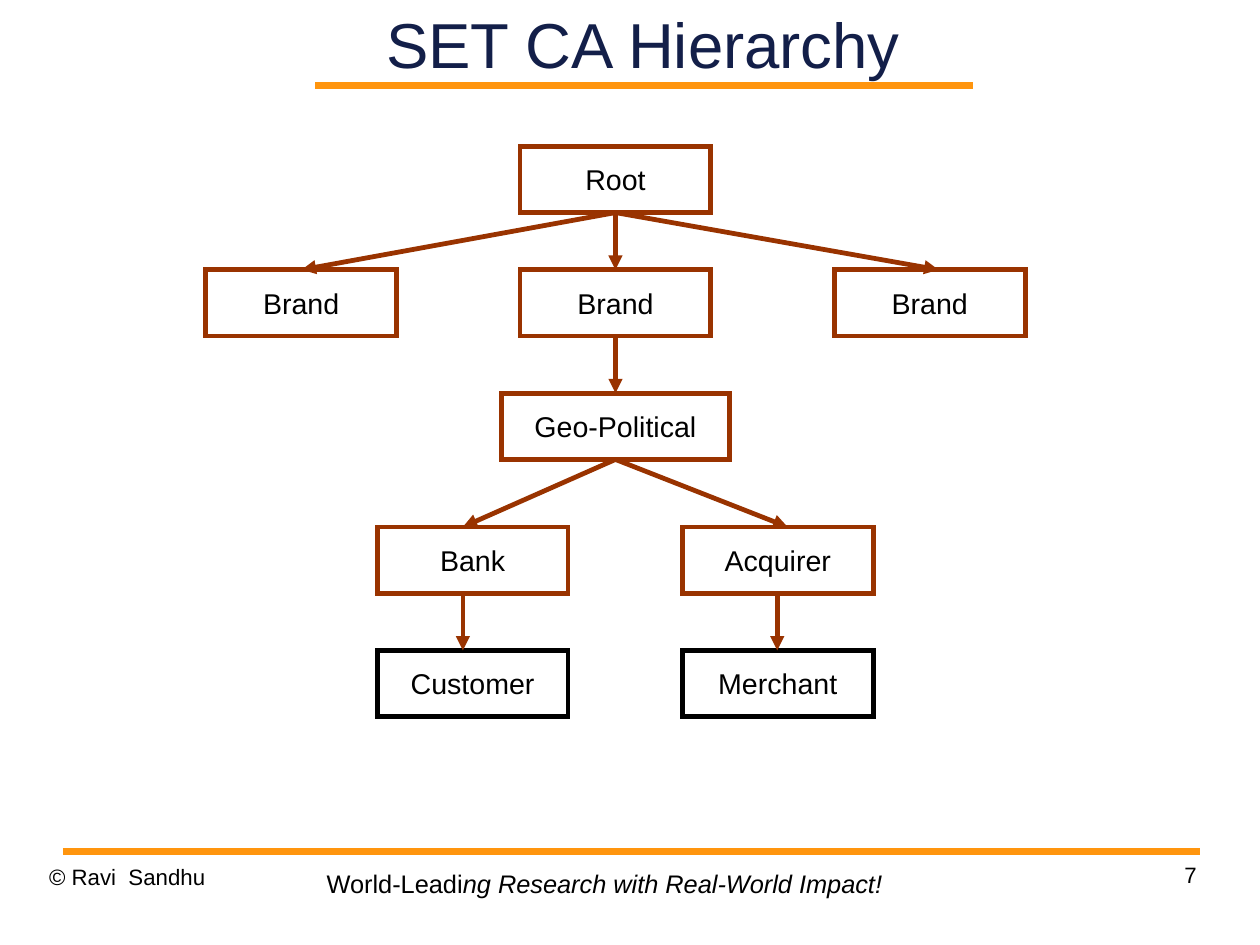
from dataclasses import dataclass

from lxml import etree
from pptx import Presentation
from pptx.dml.color import RGBColor
from pptx.enum.shapes import MSO_CONNECTOR, MSO_SHAPE
from pptx.enum.text import MSO_ANCHOR, PP_ALIGN
from pptx.oxml.ns import qn
from pptx.util import Inches, Pt

STRAIGHT = MSO_CONNECTOR.STRAIGHT
RECT = MSO_SHAPE.RECTANGLE
TOP, MIDDLE = MSO_ANCHOR.TOP, MSO_ANCHOR.MIDDLE
LEFT, CENTER, RIGHT = PP_ALIGN.LEFT, PP_ALIGN.CENTER, PP_ALIGN.RIGHT

BLACK = RGBColor(0x00, 0x00, 0x00)
NAVY = RGBColor(0x13, 0x1F, 0x49)
BROWN = RGBColor(0x99, 0x33, 0x00)
ORANGE = RGBColor(0xFF, 0x95, 0x0E)

# The page is 28 by 21 centimetres
CM_PER_INCH = 2.54
SLIDE_W, SLIDE_H = 28 / CM_PER_INCH, 21 / CM_PER_INCH

BOX_W, BOX_H = 1.67, 0.58
ROOT_Y, BRAND_Y, GEO_Y, ISSUER_Y, HOLDER_Y = 1.28, 2.36, 3.44, 4.61, 5.69
MID_X, BANK_X, ACQUIRER_X = 4.55, 3.3, 5.97
AXIS = MID_X + BOX_W / 2


@dataclass
class Box:
    text: str
    x: float
    y: float
    w: float = BOX_W
    color: RGBColor = BROWN


@dataclass
class Line:
    x1: float
    y1: float
    x2: float
    y2: float
    color: RGBColor = BROWN
    width: float = 3
    arrow: bool = True


@dataclass
class Label:
    runs: list[tuple[str, bool]]
    x: float
    y: float
    w: float
    h: float
    size: float = 14
    align: PP_ALIGN = LEFT
    inset: tuple[float, float] = (0, 0)
    wrap: bool = True
    spacing: float = 1.01


BOXES = [
    Box("Root", MID_X, ROOT_Y),
    *[Box("Brand", MID_X + i * 2.75, BRAND_Y) for i in (0, 1, -1)],
    Box("Geo-Political", AXIS - 1, GEO_Y, w=2),
    Box("Bank", BANK_X, ISSUER_Y),
    Box("Acquirer", ACQUIRER_X, ISSUER_Y),
    Box("Customer", BANK_X, HOLDER_Y, color=BLACK),
    Box("Merchant", ACQUIRER_X, HOLDER_Y, color=BLACK),
]

ARROWS = [
    *[Line(AXIS, ROOT_Y + BOX_H, x, BRAND_Y) for x in (2.64, 8.21, AXIS)],
    Line(AXIS, BRAND_Y + BOX_H, AXIS, GEO_Y),
    *[Line(AXIS, GEO_Y + BOX_H, x, ISSUER_Y) for x in (4.05, 6.89)],
    *[Line(x, ISSUER_Y + BOX_H, x, HOLDER_Y) for x in (4.05, 6.8)],
]

RULES = [
    Line(2.76, 0.75, 8.51, 0.75, ORANGE, 4.31, False),
    Line(0.55, 7.45, 10.5, 7.45, ORANGE, 4.31, False),
]

FOOTER = [
    Label([("© Ravi  Sandhu", False)], 0.43, 7.55, 2.57, 0.57),
    Label([("7", False)], 7.9, 7.53, 2.57, 0.57, align=RIGHT),
    Label([("World-Leadi", False), ("ng Research with Real-World Impact!", True)],
          2.76, 7.55, 5.08, 0.37, size=16, inset=(0.1, 0.05), wrap=False, spacing=1),
]


def set_frame(tf, anchor: MSO_ANCHOR, wrap: bool, inset: tuple[float, float]) -> None:
    dx, dy = (Inches(v) for v in inset)
    values = {"vertical_anchor": anchor, "word_wrap": wrap, "margin_left": dx,
              "margin_right": dx, "margin_top": dy, "margin_bottom": dy}
    for name, value in values.items():
        setattr(tf, name, value)


def add_run(p, text: str, size: float, color: RGBColor, italic: bool = False) -> None:
    r = p.add_run()
    r.text = text
    values = {"name": "Arial", "size": Pt(size), "bold": False, "italic": italic}
    for name, value in values.items():
        setattr(r.font, name, value)
    r.font.color.rgb = color


def add_line(slide, line: Line) -> None:
    ends = (Inches(v) for v in (line.x1, line.y1, line.x2, line.y2))
    sp = slide.shapes.add_connector(STRAIGHT, *ends)
    sp.line.color.rgb = line.color
    sp.line.width = Pt(line.width)
    if line.arrow:
        etree.SubElement(sp.line._get_or_add_ln(), qn("a:tailEnd"), type="triangle")
    etree.SubElement(sp._element.spPr, qn("a:effectLst"))


def add_box(slide, box: Box) -> None:
    sp = slide.shapes.add_shape(
        RECT, Inches(box.x), Inches(box.y), Inches(box.w), Inches(BOX_H))
    sp.shadow.inherit = False
    sp.fill.background()
    sp.line.color.rgb = box.color
    sp.line.width = Pt(3)
    etree.SubElement(sp.line._get_or_add_ln(), qn("a:miter"), lim="800000")
    set_frame(sp.text_frame, MIDDLE, False, (0.1, 0.05))
    p = sp.text_frame.paragraphs[0]
    p.alignment = CENTER
    add_run(p, box.text, 18, BLACK)


def add_label(slide, label: Label) -> None:
    sp = slide.shapes.add_textbox(
        Inches(label.x), Inches(label.y), Inches(label.w), Inches(label.h))
    set_frame(sp.text_frame, TOP, label.wrap, label.inset)
    p = sp.text_frame.paragraphs[0]
    p.alignment = label.align
    p.line_spacing = label.spacing
    for text, italic in label.runs:
        add_run(p, text, label.size, BLACK, italic)


def add_title(slide, text: str) -> None:
    sp = slide.shapes.title
    sp.left, sp.top, sp.width, sp.height = (Inches(v) for v in (2.41, 0, 6.43, 0.75))
    set_frame(sp.text_frame, MIDDLE, True, (0, 0))
    p = sp.text_frame.paragraphs[0]
    p.alignment = CENTER
    add_run(p, text, 40, NAVY)


def main() -> None:
    prs = Presentation()
    prs.slide_width = Inches(SLIDE_W)
    prs.slide_height = Inches(SLIDE_H)
    slide = prs.slides.add_slide(prs.slide_layouts[5])

    # Rules, footer and title
    for rule in RULES:
        add_line(slide, rule)
    for label in FOOTER:
        add_label(slide, label)
    add_title(slide, "SET CA Hierarchy")

    # Hierarchy
    for box in BOXES:
        add_box(slide, box)
    for arrow in ARROWS:
        add_line(slide, arrow)

    prs.save("out.pptx")


if __name__ == "__main__":
    main()
